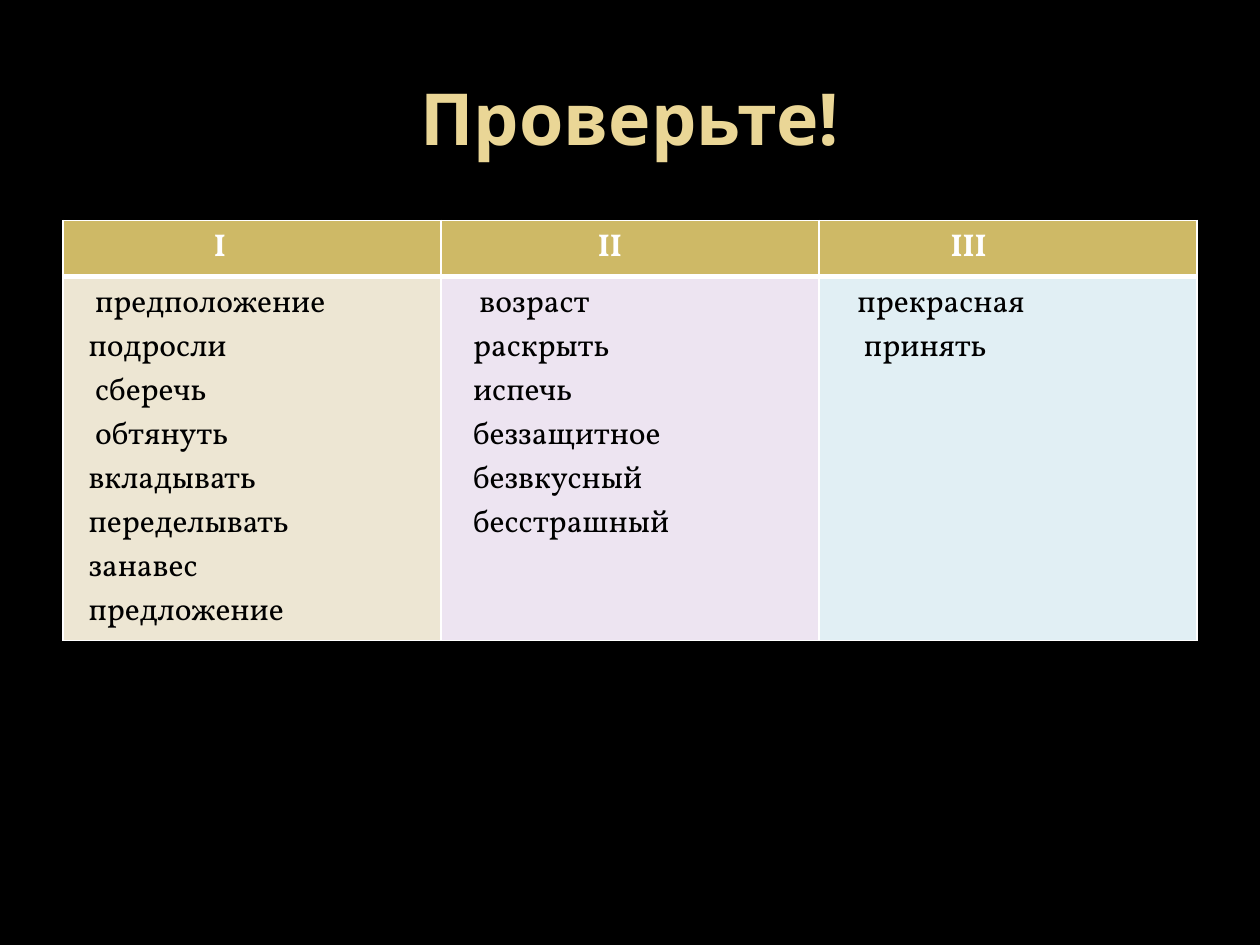
"""Build the answer-check slide: a title and a three-column table of words."""
from dataclasses import dataclass

import lxml.etree
import pptx
import pptx.dml.color
import pptx.enum.text
import pptx.oxml.ns
import pptx.util
from pptx.util import Pt

COLORS = {
    "background": "000000",
    "title": "EAD696",
    "header": "CEB966",
    "white": "FFFFFF",
    "word": "000000",
}
TABLE_FONT = "Vollkorn"
SPACE_WIDTH = 3.7


@dataclass(frozen=True)
class Line:
    text: str
    indent: float


@dataclass(frozen=True)
class Column:
    header: Line
    fill: str
    words: list[Line]


def words(indent: int, *texts: str, deeper: tuple[str, ...] = ()) -> list[Line]:
    """Indent words by a number of space widths, one more for the deeper ones."""
    return [Line(text, (indent + (text in deeper)) * SPACE_WIDTH) for text in texts]


COLUMNS = [
    Column(
        Line("I", 79), "EDE6D3",
        words(2, "предположение", "подросли", "сберечь", "обтянуть", "вкладывать",
              "переделывать", "занавес", "предложение",
              deeper=("предположение", "сберечь", "обтянуть")),
    ),
    Column(
        Line("II", 82.5), "EDE4F1",
        words(3, "возраст", "раскрыть", "испечь", "беззащитное", "безвкусный",
              "бесстрашный", deeper=("возраст",)),
    ),
    Column(
        Line("III", 68), "E1EFF4",
        words(4, "прекрасная", "принять", deeper=("принять",)),
    ),
]


def rgb(value: str) -> pptx.dml.color.RGBColor:
    """Turn a hex string into a colour."""
    return pptx.dml.color.RGBColor.from_string(value)


def style_font(font, name: str, size: float, color: str, bold: bool) -> None:
    """Set the look of one run's font."""
    font.name, font.size, font.bold = name, Pt(size), bold
    font.color.rgb = rgb(color)


def add_borders(cell, top: float, bottom: float) -> None:
    """Draw white lines on all four sides of a cell."""
    properties = cell._tc.get_or_add_tcPr()
    sides = {"lnL": 1, "lnR": 1, "lnT": top, "lnB": bottom}
    for index, (side, width) in enumerate(sides.items()):
        border = lxml.etree.Element(pptx.oxml.ns.qn(f"a:{side}"), w=str(Pt(width)))
        fill = lxml.etree.SubElement(border, pptx.oxml.ns.qn("a:solidFill"))
        lxml.etree.SubElement(fill, pptx.oxml.ns.qn("a:srgbClr"), val=COLORS["white"])
        properties.insert(index, border)


def fill_cell(cell, lines: list[Line], fill: str, color: str, bold: bool) -> None:
    """Fill a cell with colour and indented lines of text."""
    cell.fill.solid()
    cell.fill.fore_color.rgb = rgb(fill)
    cell.text_frame.text = "\n".join(line.text for line in lines)
    for paragraph, line in zip(cell.text_frame.paragraphs, lines):
        paragraph._p.get_or_add_pPr().set("marL", str(Pt(line.indent)))
        style_font(paragraph.runs[0].font, TABLE_FONT, 18, color, bold)


def add_title(slide, text: str) -> None:
    """Add the centred slide title."""
    shape = slide.shapes.add_textbox(Pt(36), Pt(21.6), Pt(648), Pt(90))
    text_frame = shape.text_frame
    text_frame.word_wrap = True
    text_frame.vertical_anchor = pptx.enum.text.MSO_ANCHOR.MIDDLE
    text_frame.text = text
    paragraph = text_frame.paragraphs[0]
    paragraph.alignment = pptx.enum.text.PP_ALIGN.CENTER
    style_font(paragraph.runs[0].font, "Noto Sans", 41, COLORS["title"], True)


def add_word_table(slide, columns: list[Column]) -> None:
    """Add the table with one header and one word list per column."""
    shape = slide.shapes.add_table(2, len(columns), Pt(36), Pt(126), Pt(648), Pt(240))
    table = shape.table
    table.rows[0].height, table.rows[1].height = Pt(32), Pt(208)
    for index, column in enumerate(columns):
        header, body = table.cell(0, index), table.cell(1, index)
        fill_cell(header, [column.header], COLORS["header"], COLORS["white"], True)
        fill_cell(body, column.words, column.fill, COLORS["word"], False)
        add_borders(header, top=1, bottom=3)
        add_borders(body, top=3, bottom=1)


def main() -> None:
    """Create and save the presentation."""
    presentation = pptx.Presentation()
    presentation.slide_width, presentation.slide_height = Pt(720), Pt(540)
    slide = presentation.slides.add_slide(presentation.slide_layouts[6])
    slide.background.fill.solid()
    slide.background.fill.fore_color.rgb = rgb(COLORS["background"])
    add_title(slide, "Проверьте!")
    add_word_table(slide, COLUMNS)
    presentation.save("out.pptx")


if __name__ == "__main__":
    main()
